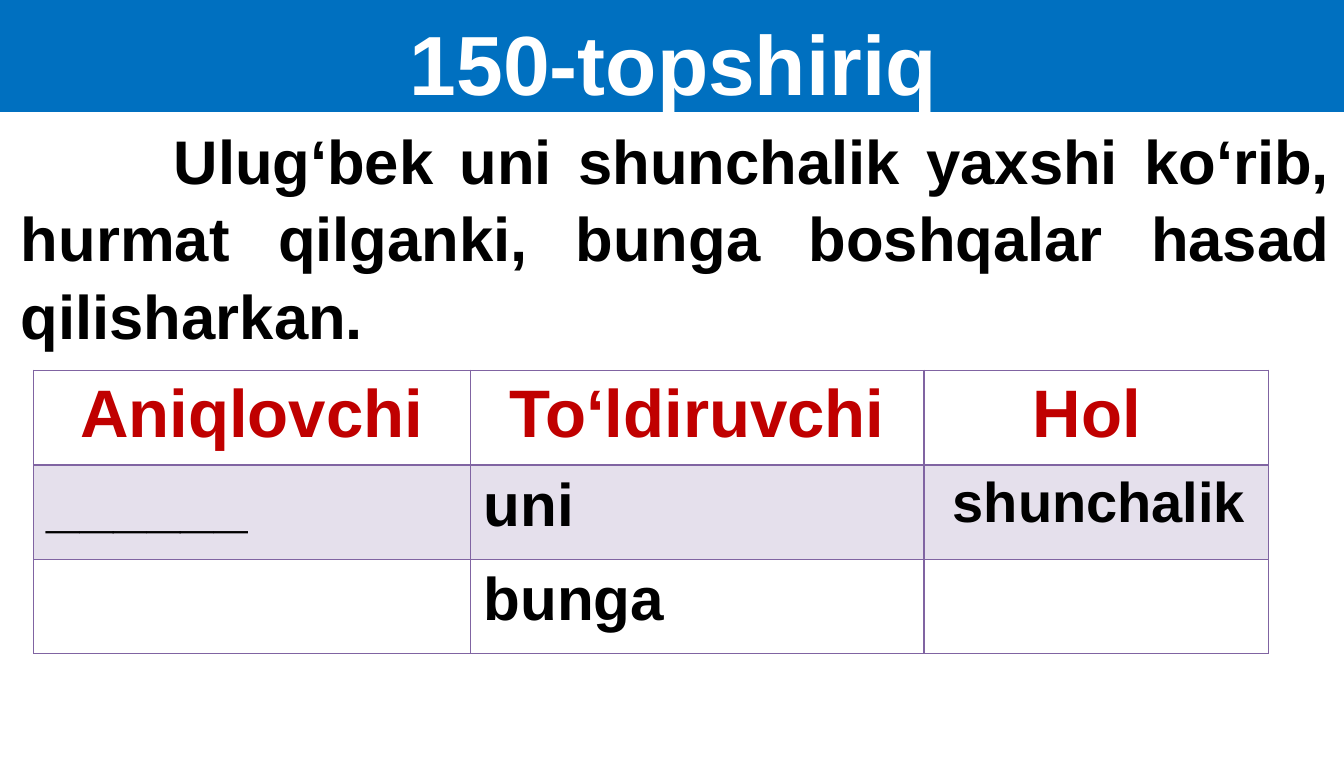
import pptx
import pptx.dml.color
import pptx.enum.shapes
import pptx.enum.text
import pptx.oxml
import pptx.oxml.ns
import pptx.util

Pt = pptx.util.Pt
ALIGN = pptx.enum.text.PP_ALIGN
PURPLE = "8064A2"


def color(hex_string):
    return pptx.dml.color.RGBColor.from_string(hex_string)


def add_text(text_frame, text, size, hex_string, alignment, insets):
    text_frame.word_wrap = True
    (text_frame.margin_left, text_frame.margin_top,
     text_frame.margin_right, text_frame.margin_bottom) = [Pt(inset) for inset in insets]
    paragraph = text_frame.paragraphs[0]
    paragraph.alignment = alignment
    run = paragraph.add_run()
    run.text = text
    run.font.name = "Arial"
    run.font.size = Pt(size)
    run.font.bold = True
    run.font.color.rgb = color(hex_string)
    return paragraph


presentation = pptx.Presentation()
presentation.slide_width = Pt(960)
presentation.slide_height = Pt(553)
slide = presentation.slides.add_slide(presentation.slide_layouts[6])

# Title banner
banner = slide.shapes.add_shape(
    pptx.enum.shapes.MSO_SHAPE.RECTANGLE, Pt(0), Pt(0), Pt(962), Pt(80))
banner.shadow.inherit = False
banner.fill.solid()
banner.fill.fore_color.rgb = color("0070C0")
banner.line.fill.background()
banner.text_frame.vertical_anchor = pptx.enum.text.MSO_ANCHOR.TOP
title = add_text(banner.text_frame, "150-topshiriq", 60, "FFFFFF", ALIGN.CENTER, (7, 5, 7, 2))
title.line_spacing = 1.05

# Sentence with a first-line indent
sentence_box = slide.shapes.add_textbox(Pt(10), Pt(80), Pt(948), Pt(167))
sentence = add_text(
    sentence_box.text_frame,
    "Ulug‘bek uni shunchalik yaxshi ko‘rib, hurmat qilganki, bunga boshqalar hasad qilisharkan.",
    44, "000000", ALIGN.JUSTIFY, (5, 5, 7, 2))
sentence.line_spacing = 1.05
sentence._p.get_or_add_pPr().set("indent", str(Pt(109)))

# Table of sentence parts
rows = [
    [("Aniqlovchi", 48), ("To‘ldiruvchi", 48), ("Hol ", 48)],
    [("______", 43), ("uni", 43), (" shunchalik", 40)],
    [None, ("bunga", 43), None],
]
column_widths = [312, 324, 246]
row_height = 67.5
table = slide.shapes.add_table(
    len(rows), len(column_widths), Pt(24), Pt(264.5),
    Pt(sum(column_widths)), Pt(row_height * len(rows))).table
for column, width in zip(table.columns, column_widths):
    column.width = Pt(width)

for row_index, row in enumerate(rows):
    table.rows[row_index].height = Pt(row_height)
    is_header = row_index == 0
    for column_index, entry in enumerate(row):
        cell = table.cell(row_index, column_index)

        # Borders, heavier between the header and the body
        widths = {"L": 1, "R": 1, "T": 2 if row_index == 1 else 1, "B": 2 if is_header else 1}
        for side, width in widths.items():
            cell._tc.get_or_add_tcPr().append(pptx.oxml.parse_xml(
                f'<a:ln{side} {pptx.oxml.ns.nsdecls("a")} w="{Pt(width)}"><a:solidFill>'
                f'<a:srgbClr val="{PURPLE}"/></a:solidFill></a:ln{side}>'))

        if row_index == 1:
            cell.fill.solid()
            cell.fill.fore_color.rgb = color("E5E0EC")
        else:
            cell.fill.background()

        if entry:
            text, size = entry
            add_text(cell.text_frame, text, size, "C00000" if is_header else "000000",
                     ALIGN.CENTER if is_header else ALIGN.LEFT, (0, 0, 0, 0))
        cell.margin_left = cell.margin_right = Pt(9.5)
        cell.margin_top = cell.margin_bottom = Pt(5)

presentation.save("out.pptx")
